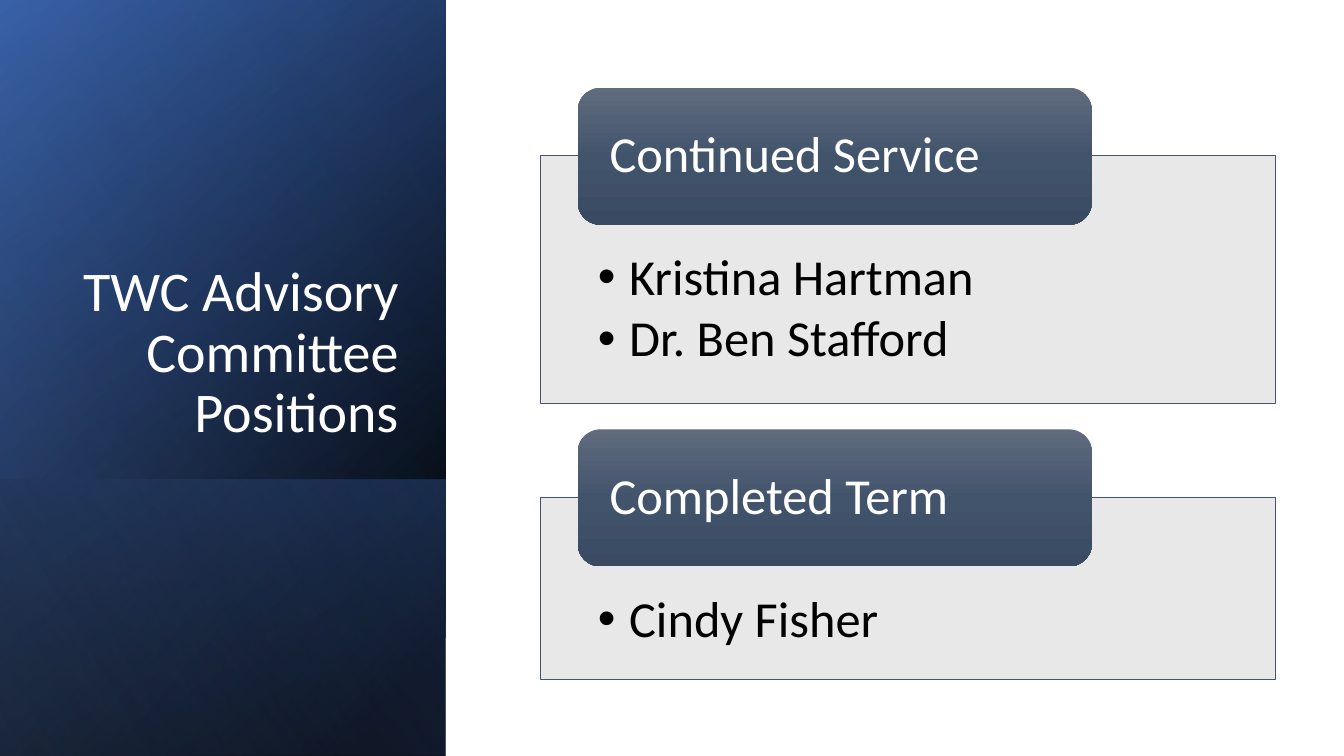
from dataclasses import dataclass

from lxml.etree import SubElement
from pptx import Presentation
from pptx.dml.color import RGBColor
from pptx.enum.shapes import MSO_SHAPE as Shape
from pptx.enum.text import MSO_ANCHOR as Anchor, PP_ALIGN as Align
from pptx.oxml.ns import qn
from pptx.util import Inches, Pt


@dataclass(frozen=True)
class Theme:
    font: str = "Calibri"
    title_size: int = 40
    body_size: int = 36
    light: str = "FFFFFF"
    dark: str = "000000"
    navy: str = "2F5597"
    blue: str = "4472C4"
    pale_blue: str = "8FAADC"
    panel: str = "E7E6E6"
    outline: str = "44546A"
    # Stops are (position %, colour, opacity %)
    header: tuple = ((0, "606B7D", 100), (50, "42546C", 100), (100, "394A62", 100))


class SlideBuilder:
    def __init__(self, slide, theme):
        self.slide = slide
        self.theme = theme

    def shape(self, kind, left, top, width, height):
        box = self.slide.shapes.add_shape(
            kind, Inches(left), Inches(top), Inches(width), Inches(height))
        box.shadow.inherit = False
        box.line.fill.background()
        return box

    def gradient(self, box, stops, angle):
        box.fill.gradient()
        fill = box._element.spPr.find(qn("a:gradFill"))
        stop_list = fill.find(qn("a:gsLst"))
        stop_list.clear()
        for position, color, opacity in stops:
            stop = SubElement(stop_list, qn("a:gs"), pos=str(position * 1000))
            tint = SubElement(stop, qn("a:srgbClr"), val=color)
            if opacity < 100:
                SubElement(tint, qn("a:alpha"), val=str(opacity * 1000))
        direction = fill.find(qn("a:lin"))
        direction.set("ang", str(angle * 60000))
        direction.set("scaled", "0")

    def band(self, top, width, height, stops, angle):
        """Gradient band at the left edge, turned a quarter and mirrored."""
        left = (width - height) / 2
        box = self.shape(Shape.RECTANGLE, left, top - left, height, width)
        box.rotation = 90
        box._element.spPr.find(qn("a:xfrm")).set("flipH", "1")
        self.gradient(box, stops, angle)

    def frame(self, box, anchor, insets):
        frame = box.text_frame
        frame.word_wrap = True
        frame.vertical_anchor = anchor
        (frame.margin_left, frame.margin_top,
         frame.margin_right, frame.margin_bottom) = map(Inches, insets)
        return frame

    def add_text(self, para, text, size, color, align=Align.LEFT):
        para.alignment = align
        para.line_spacing = 0.9
        span = para.add_run()
        span.text = text
        span.font.name = self.theme.font
        span.font.size = Pt(size)
        span.font.color.rgb = RGBColor.from_string(color)

    def bullet(self, para):
        para.space_after = Pt(5)
        props = para._p.get_or_add_pPr()
        props.set("marL", str(Inches(0.31)))
        props.set("indent", str(-Inches(0.31)))
        SubElement(props, qn("a:buFont"), typeface="Arial")
        SubElement(props, qn("a:buChar"), char="•")

    def title(self, text, left, top, width, height):
        box = self.slide.shapes.add_textbox(
            Inches(left), Inches(top), Inches(width), Inches(height))
        frame = self.frame(box, Anchor.BOTTOM, (0.1, 0.05, 0.1, 0.05))
        self.add_text(frame.paragraphs[0], text, self.theme.title_size,
                      self.theme.light, Align.RIGHT)

    def panel(self, top, height, names):
        box = self.shape(Shape.RECTANGLE, 5.36, top, 7.29, height)
        box.fill.solid()
        box.fill.fore_color.rgb = RGBColor.from_string(self.theme.panel)
        tint = box._element.spPr.find(qn("a:solidFill"))[0]
        SubElement(tint, qn("a:alpha"), val="90000")
        box.line.color.rgb = RGBColor.from_string(self.theme.outline)
        box.line.width = Pt(0.5)
        frame = self.frame(box, Anchor.TOP, (0.57, 0.96, 0.57, 0.28))
        for index, name in enumerate(names):
            para = frame.add_paragraph() if index else frame.paragraphs[0]
            self.add_text(para, name, self.theme.body_size, self.theme.dark)
            self.bullet(para)

    def header(self, top, text):
        box = self.shape(Shape.ROUNDED_RECTANGLE, 5.73, top, 5.1, 1.36)
        self.gradient(box, self.theme.header, 90)
        frame = self.frame(box, Anchor.MIDDLE, (0.25, 0, 0.25, 0))
        self.add_text(frame.paragraphs[0], text, self.theme.body_size, self.theme.light)


def main():
    deck = Presentation()
    deck.slide_width, deck.slide_height = Inches(13.33), Inches(7.5)
    theme = Theme()
    page = SlideBuilder(deck.slides.add_slide(deck.slide_layouts[6]), theme)

    # Layered gradients of the title column
    side = 4.42
    page.band(0, side, 7.5, [(8, theme.dark, 100), (100, theme.navy, 100)], 50)
    page.band(0, side, 7.5, [(0, theme.dark, 0), (99, theme.blue, 46)], 30)
    page.band(4.76, side, 2.74, [(2, theme.blue, 29), (100, theme.dark, 30)], 130)
    page.band(0, side, 7.5, [(0, theme.dark, 0), (99, theme.pale_blue, 11)], 120)
    page.title("TWC Advisory Committee Positions", 0.64, 1.84, 3.41, 2.62)

    # Stacked panels, each overlapped by its header
    groups = [
        ("Continued Service", 2.46, ["Kristina Hartman", "Dr. Ben Stafford"]),
        ("Completed Term", 1.81, ["Cindy Fisher"]),
    ]
    top = 1.54
    for heading, height, names in groups:
        page.panel(top, height, names)
        page.header(top - 0.67, heading)
        top += height + 0.93

    deck.save("out.pptx")


if __name__ == "__main__":
    main()
